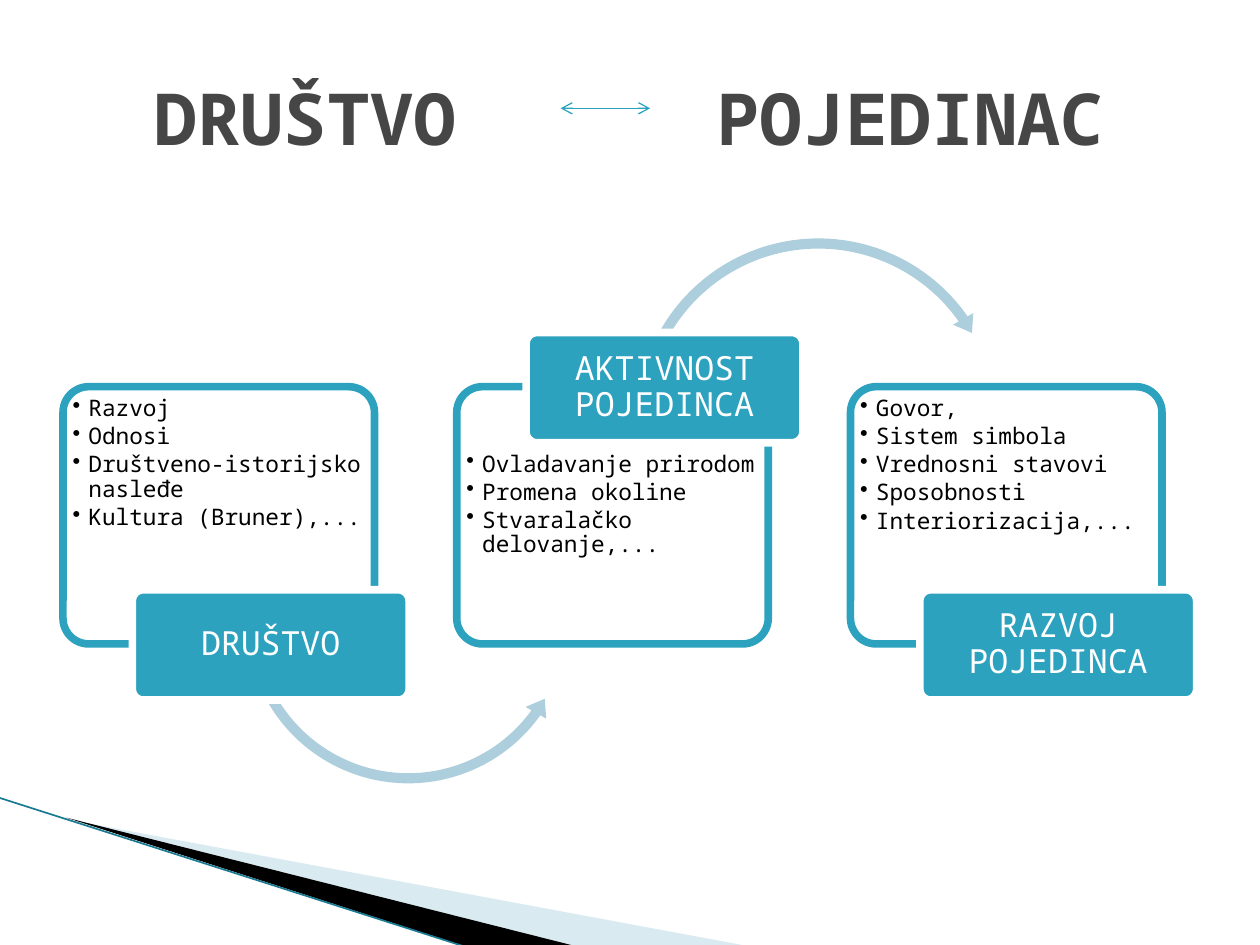
from dataclasses import dataclass
from typing import Any

import pptx
import pptx.dml.color
import pptx.enum.shapes
import pptx.enum.text
import pptx.oxml
import pptx.oxml.ns
import pptx.util

Pt = pptx.util.Pt
SHAPE = pptx.enum.shapes.MSO_SHAPE
ALIGN = pptx.enum.text.PP_ALIGN
ANCHOR = pptx.enum.text.MSO_ANCHOR
FONT = "Noto Sans Mono"
TEAL, PALE, WHITE, BLACK = "2DA2BF", "ADCEDC", "FFFFFF", "000000"
STEP_LEFT, STEP_PITCH = 36, 225


@dataclass
class Arrow:
    kind: Any
    left: float
    top: float
    size: float
    adjustments: tuple[float, ...]


@dataclass
class Step:
    label: str
    items: list[str]
    label_top: float = 337
    list_top: float = 224.6
    arrow: Arrow | None = None


STEPS = [
    Step("DRUŠTVO",
         ["Razvoj", "Odnosi", "Društveno-istorijsko nasleđe", "Kultura (Bruner),..."],
         arrow=Arrow(SHAPE.LEFT_CIRCULAR_ARROW, 136.8, 258.5, 193,
                     (0.03, 3.637, 21.392, 90.245, 0.035))),
    Step("AKTIVNOST POJEDINCA",
         ["Ovladavanje prirodom", "Promena okoline", "Stvaralačko delovanje,..."],
         label_top=190, list_top=256.3,
         arrow=Arrow(SHAPE.CIRCULAR_ARROW, 360, 132.5, 215.3,
                     (0.027, 3.23, 195.015, 125.755, 0.031))),
    Step("RAZVOJ POJEDINCA",
         ["Govor,", "Sistem simbola", "Vrednosni stavovi", "Sposobnosti",
          "Interiorizacija,..."]),
]


def color(value: str) -> pptx.dml.color.RGBColor:
    return pptx.dml.color.RGBColor.from_string(value)


def add_xml(parent: Any, xml: str) -> None:
    """Append one DrawingML element, written without its namespace."""
    space = pptx.oxml.ns.nsdecls("a")
    name, rest = xml[1:].split(" ", 1)
    parent.append(pptx.oxml.parse_xml(f"<{name} {space} {rest}"))


def apply(target: Any, values: dict[str, Any]) -> None:
    for name, value in values.items():
        setattr(target, name, value)


def set_font(para: Any, size: float, value: str, bold: bool = False) -> None:
    for span in para.runs:
        apply(span.font, {"name": FONT, "size": Pt(size), "bold": bold})
        span.font.color.rgb = color(value)


def set_frame(frame: Any, side: float, end: float, anchor: Any) -> None:
    apply(frame, {"word_wrap": True, "vertical_anchor": anchor,
                  "margin_left": Pt(side), "margin_right": Pt(side),
                  "margin_top": Pt(end), "margin_bottom": Pt(end)})


def paint(shape: Any, fill: str, line: str | None = None, alpha: int = 100) -> None:
    shape.shadow.inherit = False
    shape.fill.solid()
    shape.fill.fore_color.rgb = color(fill)
    if alpha < 100:
        solid = shape._element.spPr.find(pptx.oxml.ns.qn("a:solidFill"))
        add_xml(solid[0], f'<a:alpha val="{alpha * 1000}"/>')
    if line:
        shape.line.color.rgb = color(line)
        shape.line.width = Pt(4.33)
    else:
        shape.line.fill.background()


def add_round_box(page: Any, left: float, top: float, width: float, height: float) -> Any:
    box = page.shapes.add_shape(SHAPE.ROUNDED_RECTANGLE,
                                Pt(left), Pt(top), Pt(width), Pt(height))
    box.adjustments[0] = 0.1
    return box


def add_line(page: Any, start: tuple, end: tuple, value: str, width: float) -> Any:
    line = page.shapes.add_connector(pptx.enum.shapes.MSO_CONNECTOR.STRAIGHT,
                                     Pt(start[0]), Pt(start[1]), Pt(end[0]), Pt(end[1]))
    line.line.color.rgb = color(value)
    line.line.width = Pt(width)
    add_xml(line._element.spPr, "<a:effectLst />")
    return line


def add_polygon(page: Any, points: list[tuple], fill: str, alpha: int = 100) -> None:
    corners = [(Pt(x), Pt(y)) for x, y in points]
    builder = page.shapes.build_freeform(*corners[0])
    builder.add_line_segments(corners[1:], close=True)
    paint(builder.convert_to_shape(), fill, alpha=alpha)


def add_list(page: Any, items: list[str], left: float, top: float) -> None:
    box = page.shapes.add_textbox(Pt(left), Pt(top), Pt(171.4), Pt(108.7))
    frame = box.text_frame
    set_frame(frame, 2.16, 2.16, ANCHOR.TOP)
    frame.text = "\n".join(items)
    for para in frame.paragraphs:
        properties = para._p.get_or_add_pPr()
        properties.set("marL", str(Pt(9)))
        properties.set("indent", str(-Pt(9)))
        add_xml(properties, '<a:buChar char="•"/>')
        apply(para, {"line_spacing": 0.9, "space_after": Pt(2)})
        set_font(para, 13, BLACK)


def add_arrow(page: Any, arrow: Arrow) -> None:
    shape = page.shapes.add_shape(arrow.kind, Pt(arrow.left), Pt(arrow.top),
                                  Pt(arrow.size), Pt(arrow.size))
    for index, value in enumerate(arrow.adjustments):
        shape.adjustments[index] = value
    paint(shape, PALE)


def add_step(page: Any, step: Step, left: float) -> None:
    paint(add_round_box(page, left, 221, 178, 147), WHITE, TEAL, alpha=90)
    add_list(page, step.items, left + 3.4, step.list_top)
    if step.arrow:
        add_arrow(page, step.arrow)
    box = add_round_box(page, left + 39.6, step.label_top, 158.2, 63)
    paint(box, TEAL, WHITE)
    set_frame(box.text_frame, 2.88, 2.16, ANCHOR.MIDDLE)
    box.text_frame.text = step.label
    para = box.text_frame.paragraphs[0]
    apply(para, {"alignment": ALIGN.CENTER, "line_spacing": 0.9})
    set_font(para, 19, WHITE)


def add_title(page: Any) -> None:
    title = page.shapes.title
    apply(title, {"left": Pt(36), "top": Pt(21.6), "width": Pt(648), "height": Pt(90)})
    frame = title.text_frame
    set_frame(frame, 52.5, 3.6, ANCHOR.MIDDLE)
    frame.auto_size = pptx.enum.text.MSO_AUTO_SIZE.NONE
    frame.text = "DRUŠTVO\tPOJEDINAC"
    para = frame.paragraphs[0]
    para.alignment = ALIGN.LEFT
    add_xml(para._p.get_or_add_pPr(),
            f'<a:tabLst ><a:tab pos="{Pt(320.8)}" algn="l"/></a:tabLst>')
    set_font(para, 41, "464646", bold=True)


def main() -> None:
    deck = pptx.Presentation()
    deck.slide_width, deck.slide_height = Pt(720), Pt(540)
    page = deck.slides.add_slide(deck.slide_layouts[5])

    # Corner decoration
    add_polygon(page, [(39.6, 468.5), (428, 540.7), (328, 540.7)], "A0CBDC", alpha=40)
    add_polygon(page, [(38, 467.3), (329, 540.7), (267.8, 541.4)], BLACK)
    add_line(page, (-0.7, 455.8), (267.1, 541.4), "1A7A92", 0.95)

    # Process steps
    for index, step in enumerate(STEPS):
        add_step(page, step, STEP_LEFT + index * STEP_PITCH)

    # Title with its two-way arrow
    add_title(page)
    link = add_line(page, (320.4, 61.9), (371.5, 61.9), TEAL, 0.75)
    for end in ("headEnd", "tailEnd"):
        add_xml(link.line._get_or_add_ln(), f'<a:{end} type="arrow"/>')

    deck.save("out.pptx")


if __name__ == "__main__":
    main()
